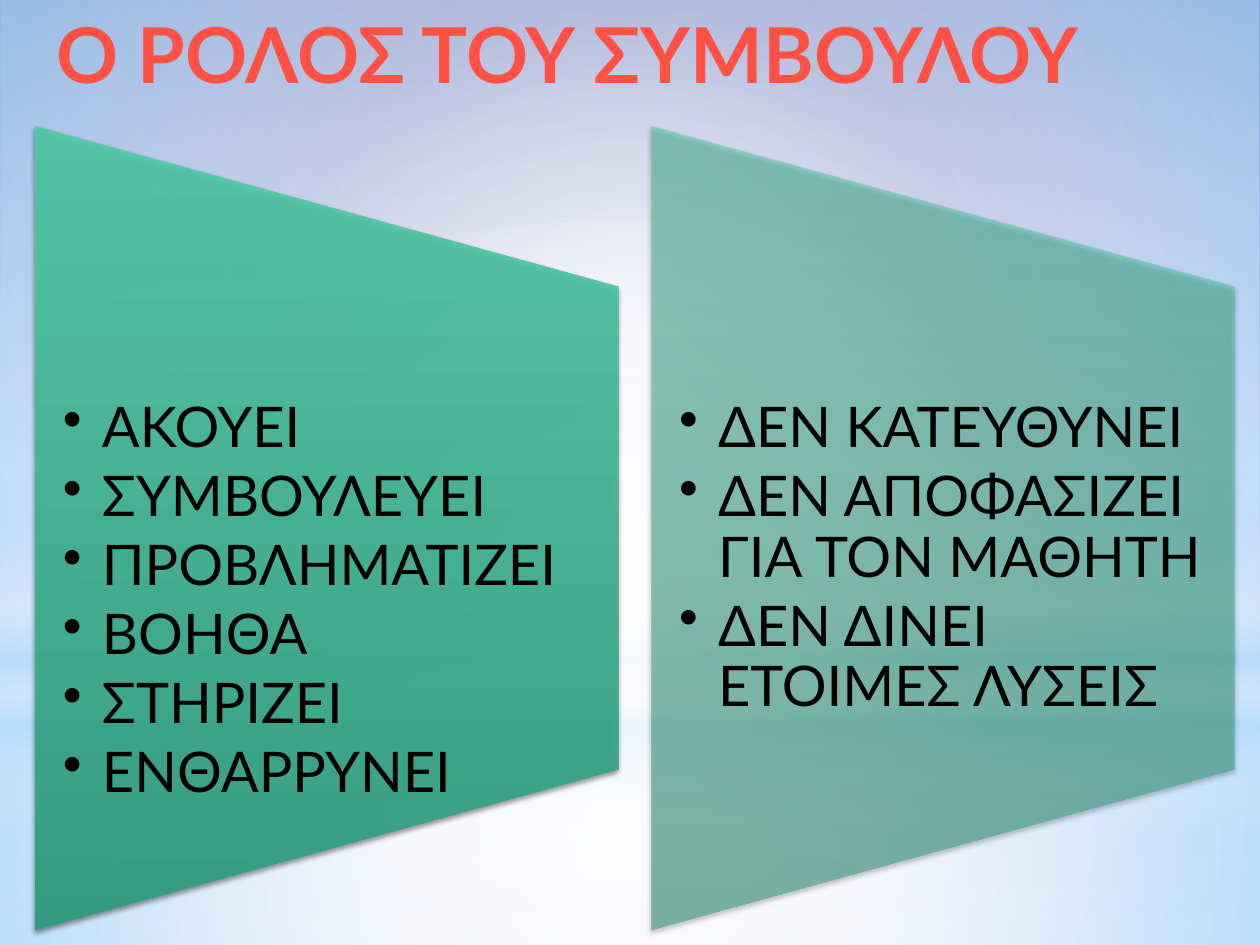
from lxml import etree
from pptx import Presentation
from pptx.dml.color import RGBColor
from pptx.enum.shapes import MSO_SHAPE as Shape
from pptx.enum.text import MSO_ANCHOR as Anchor, PP_ALIGN as Align
from pptx.oxml import parse_xml
from pptx.oxml.ns import nsdecls, qn
from pptx.util import Inches, Pt

COLORS = {
    "title": "FF5244", "text": "000000", "shadow": "000000",
    "green": "52CBA9", "dark_green": "2E9D7F",
    "white": "FFFFFF", "sky": "B4DCFA",
    "navy": "31489F", "lilac": "C1C7F2", "pale": "E1E3F8",
}
FONT = "Lato"
DOES = ["ΑΚΟΥΕΙ", "ΣΥΜΒΟΥΛΕΥΕΙ", "ΠΡΟΒΛΗΜΑΤΙΖΕΙ", "ΒΟΗΘΑ", "ΣΤΗΡΙΖΕΙ", "ΕΝΘΑΡΡΥΝΕΙ"]
DOES_NOT = ["ΔΕΝ ΚΑΤΕΥΘΥΝΕΙ", "ΔΕΝ ΑΠΟΦΑΣΙΖΕΙ ΓΙΑ ΤΟΝ ΜΑΘΗΤΗ", "ΔΕΝ ΔΙΝΕΙ ΕΤΟΙΜΕΣ ΛΥΣΕΙΣ"]

PANEL_WIDTH, PANEL_HEIGHT, PANEL_MIDDLE = 4.63, 6.38, 4.19


def color_xml(name, opacity):
    return (f'<a:srgbClr val="{COLORS[name]}">'
            f'<a:alpha val="{opacity * 1000}"/></a:srgbClr>')


def set_gradient(properties, stops, radial=False):
    """Replace the empty fill in properties by (position, color, opacity) stops."""
    stops_xml = "".join(f'<a:gs pos="{position * 1000}">{color_xml(name, opacity)}</a:gs>'
                        for position, name, opacity in stops)
    if radial:
        shade = ('<a:path path="circle"><a:fillToRect l="50000" t="50000" '
                 'r="50000" b="50000"/></a:path>')
    else:
        shade = '<a:lin ang="5400000" scaled="0"/>'
    gradient = parse_xml(f'<a:gradFill {nsdecls("a")} rotWithShape="0">'
                         f'<a:gsLst>{stops_xml}</a:gsLst>{shade}</a:gradFill>')
    properties.replace(properties.find(qn("a:noFill")), gradient)


def add_gradient_shape(page, kind, left, top, width, height, stops, radial=False):
    shape = page.shapes.add_shape(kind, Inches(left), Inches(top),
                                  Inches(width), Inches(height))
    shape.shadow.inherit = False
    shape.line.fill.background()
    shape.fill.background()
    set_gradient(shape._element.spPr, stops, radial)
    return shape


def write_text(para, text, size, color, bold=False, align=Align.LEFT):
    para.alignment = align
    span = para.add_run()
    span.text = text
    span.font.name = FONT
    span.font.size = Pt(size)
    span.font.bold = bold
    span.font.color.rgb = RGBColor.from_string(COLORS[color])


def add_bullet(para):
    properties = para._p.get_or_add_pPr()
    properties.set("marL", str(Inches(0.31)))
    properties.set("indent", str(-Inches(0.31)))
    etree.SubElement(properties, qn("a:buChar")).set("char", "•")


def set_margins(frame, side, top=0):
    frame.margin_left = frame.margin_right = Inches(side)
    frame.margin_top, frame.margin_bottom = Inches(top), 0
    frame.vertical_anchor = Anchor.TOP
    frame.word_wrap = True


def add_backdrop(page):
    page.background.fill.background()
    background = page._element.cSld.find(qn("p:bg")).find(qn("p:bgPr"))
    set_gradient(background, [(0, "navy", 100), (50, "lilac", 100), (100, "pale", 100)])
    add_gradient_shape(page, Shape.RECTANGLE, 0, 0, 10, 5.58,
                       [(0, "white", 89), (48, "white", 62), (100, "sky", 79)], radial=True)
    add_gradient_shape(page, Shape.RECTANGLE, 0, 5.58, 10, 1.92,
                       [(0, "white", 91), (37, "white", 76), (100, "sky", 79)], radial=True)
    add_gradient_shape(page, Shape.RECTANGLE, 0, 4.12, 10, 2.5,
                       [(0, "white", 0), (29, "white", 30), (45, "sky", 40),
                        (55, "white", 26), (65, "sky", 60), (100, "white", 0)])
    add_gradient_shape(page, Shape.OVAL, -0.03, 1.75, 10, 5.58,
                       [(0, "white", 100), (56, "white", 0)], radial=True)


def add_panel(page, left, items, opacity):
    """Add a trapezoid, narrow side to the right, with a bulleted list on it."""
    panel = add_gradient_shape(
        page, Shape.FLOWCHART_MANUAL_OPERATION,
        left + (PANEL_WIDTH - PANEL_HEIGHT) / 2, PANEL_MIDDLE - PANEL_WIDTH / 2,
        PANEL_HEIGHT, PANEL_WIDTH,
        [(0, "green", opacity), (100, "dark_green", opacity)])
    panel.rotation = 270
    panel._element.spPr.find(qn("a:effectLst")).append(parse_xml(
        f'<a:outerShdw {nsdecls("a")} blurRad="{Pt(3.1)}" dist="{Pt(1.8)}" '
        f'dir="5400000" rotWithShape="0">{color_xml("shadow", 45)}</a:outerShdw>'))

    box = page.shapes.add_textbox(Inches(left), Inches(3.17),
                                  Inches(PANEL_WIDTH), Inches(3.3))
    frame = box.text_frame
    set_margins(frame, side=0.22)
    for index, item in enumerate(items):
        para = frame.add_paragraph() if index else frame.paragraphs[0]
        write_text(para, item, size=32, color="text")
        para.line_spacing = 0.9
        para.space_after = Pt(4.8)
        add_bullet(para)


def add_title(page, text):
    title = page.shapes.title
    title.left, title.top = Inches(0.06), 0
    title.width, title.height = Inches(8.89), Inches(1.25)
    set_margins(title.text_frame, side=0.1, top=0.05)
    write_text(title.text_frame.paragraphs[0], text, size=44, color="title",
               bold=True, align=Align.CENTER)
    page.shapes._spTree.append(title._element)  # bring to front


def main():
    deck = Presentation()
    deck.slide_width, deck.slide_height = Inches(10), Inches(7.5)
    page = deck.slides.add_slide(deck.slide_layouts[5])
    add_backdrop(page)
    add_panel(page, 0.28, DOES, opacity=90)
    add_panel(page, 5.17, DOES_NOT, opacity=50)
    add_title(page, "Ο ΡΟΛΟΣ ΤΟΥ ΣΥΜΒΟΥΛΟΥ")
    deck.save("out.pptx")


if __name__ == "__main__":
    main()
